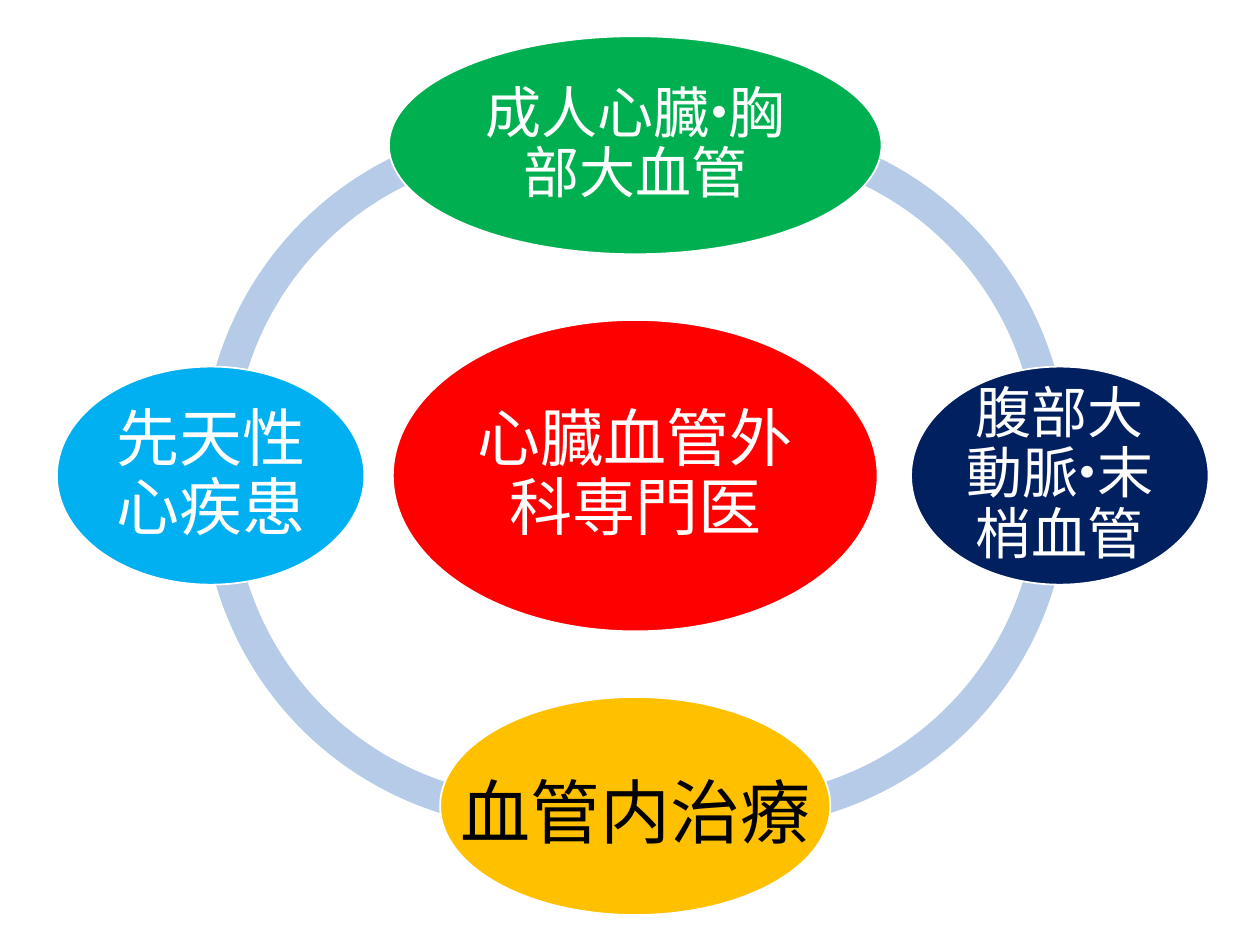
from dataclasses import dataclass

from pptx import Presentation
from pptx.dml.color import RGBColor
from pptx.enum.shapes import MSO_SHAPE
from pptx.enum.text import MSO_ANCHOR, MSO_AUTO_SIZE, PP_ALIGN
from pptx.shapes.autoshape import Shape
from pptx.slide import Slide
from pptx.util import Pt

FONT = "Calibri"
WHITE, BLACK, RING = "FFFFFF", "000000", "B5CBE7"
DOT = "・"
DOT_SPACING = -1050  # hundredths of a point, on each side of the dot

# Shared geometry, in points
CENTER_X, CENTER_Y = 363, 271.8
REACH_X, REACH_Y = 242.6, 188.8
SATELLITE_HEIGHT = 124.6
ARC_SIZE, ARC_SHIFT_X, ARC_SHIFT_Y = 387.4, 53.7, 7.9
ARC_THICKNESS = 0.046


@dataclass
class Arc:
    side_x: int
    side_y: int
    start: float  # degrees
    end: float


@dataclass
class Bubble:
    side_x: int
    side_y: int
    width: float
    height: float
    fill: str
    text: str = ""
    size: float = 36
    inset: float = 3.4


ARCS = [
    Arc(-1, -1, 177.67, 286.38),
    Arc(-1, 1, 73.62, 182.33),
    Arc(1, 1, 357.62, 106.56),
    Arc(1, -1, 253.44, 2.38),
]

BUBBLES = [
    Bubble(0, 0, 277, 178, "FF0000", "心臓血管外科専門医"),
    Bubble(0, -1, 281.5, SATELLITE_HEIGHT, "00B050", "成人心臓・胸部大血管", 32, 3),
    Bubble(1, 0, 170, SATELLITE_HEIGHT, "002060", "腹部大動脈・末梢血管", 32, 3),
    Bubble(0, 1, 223, SATELLITE_HEIGHT, "FFC000"),
    Bubble(-1, 0, 175.7, SATELLITE_HEIGHT, "00B0F0", "先天性心疾患"),
]


def color(value: str) -> RGBColor:
    return RGBColor.from_string(value)


def add_centered(slide: Slide, kind: MSO_SHAPE, x: float, y: float,
                 width: float, height: float, fill: str) -> Shape:
    shape = slide.shapes.add_shape(
        kind, Pt(x - width / 2), Pt(y - height / 2), Pt(width), Pt(height))
    shape.shadow.inherit = False
    shape.fill.solid()
    shape.fill.fore_color.rgb = color(fill)
    return shape


def split_at_dot(text: str) -> list[str]:
    """Separate the dot and its two neighbours from the rest of the text."""
    position = text.find(DOT)
    if position < 0:
        return [text]
    return [text[:position - 1], text[position - 1:position + 2], text[position + 2:]]


def write(shape: Shape, text: str, size: float, font_color: str) -> None:
    first, *others = split_at_dot(text)
    shape.text_frame.text = first
    paragraph = shape.text_frame.paragraphs[0]
    for piece in others:
        paragraph.add_run().text = piece
    for run in paragraph.runs:
        run.font.name = FONT
        run.font.size = Pt(size)
        run.font.color.rgb = color(font_color)
        # Tighten the wide dot so that each line fits its bubble
        if DOT in run.text:
            run.font._element.set("spc", str(DOT_SPACING))


def draw_arc(slide: Slide, arc: Arc) -> None:
    shape = add_centered(
        slide, MSO_SHAPE.BLOCK_ARC, CENTER_X + arc.side_x * ARC_SHIFT_X,
        CENTER_Y + arc.side_y * ARC_SHIFT_Y, ARC_SIZE, ARC_SIZE, RING)
    shape.line.fill.background()
    # Angles are stored in 60000ths of a degree, adjustments in 100000ths
    shape.adjustments[0] = arc.start * 0.6
    shape.adjustments[1] = arc.end * 0.6
    shape.adjustments[2] = ARC_THICKNESS


def draw_bubble(slide: Slide, bubble: Bubble) -> None:
    shape = add_centered(
        slide, MSO_SHAPE.OVAL, CENTER_X + bubble.side_x * REACH_X,
        CENTER_Y + bubble.side_y * REACH_Y, bubble.width, bubble.height, bubble.fill)
    shape.line.color.rgb = color(WHITE)
    shape.line.width = Pt(1)
    if not bubble.text:
        return
    write(shape, bubble.text, bubble.size, WHITE)
    frame = shape.text_frame
    frame.word_wrap = True
    frame.vertical_anchor = MSO_ANCHOR.MIDDLE
    frame.margin_left = frame.margin_right = Pt(bubble.inset)
    frame.margin_top = frame.margin_bottom = Pt(bubble.inset)
    paragraph = frame.paragraphs[0]
    paragraph.alignment = PP_ALIGN.CENTER
    paragraph.line_spacing = 0.9
    paragraph.space_after = Pt(bubble.size * 0.35)


def draw_label(slide: Slide) -> None:
    box = slide.shapes.add_textbox(Pt(256.3), Pt(435.6), Pt(260.6), Pt(104.4))
    write(box, "血管内治療", 40, BLACK)
    box.text_frame.word_wrap = True
    box.text_frame.auto_size = MSO_AUTO_SIZE.SHAPE_TO_FIT_TEXT


def main() -> None:
    presentation = Presentation()
    presentation.slide_width, presentation.slide_height = Pt(720), Pt(540)
    slide = presentation.slides.add_slide(presentation.slide_layouts[6])

    # Ring behind the bubbles
    for arc in ARCS:
        draw_arc(slide, arc)

    # Centre and its four fields
    for bubble in BUBBLES:
        draw_bubble(slide, bubble)

    # Label over the lower bubble
    draw_label(slide)

    presentation.save("out.pptx")


if __name__ == "__main__":
    main()
